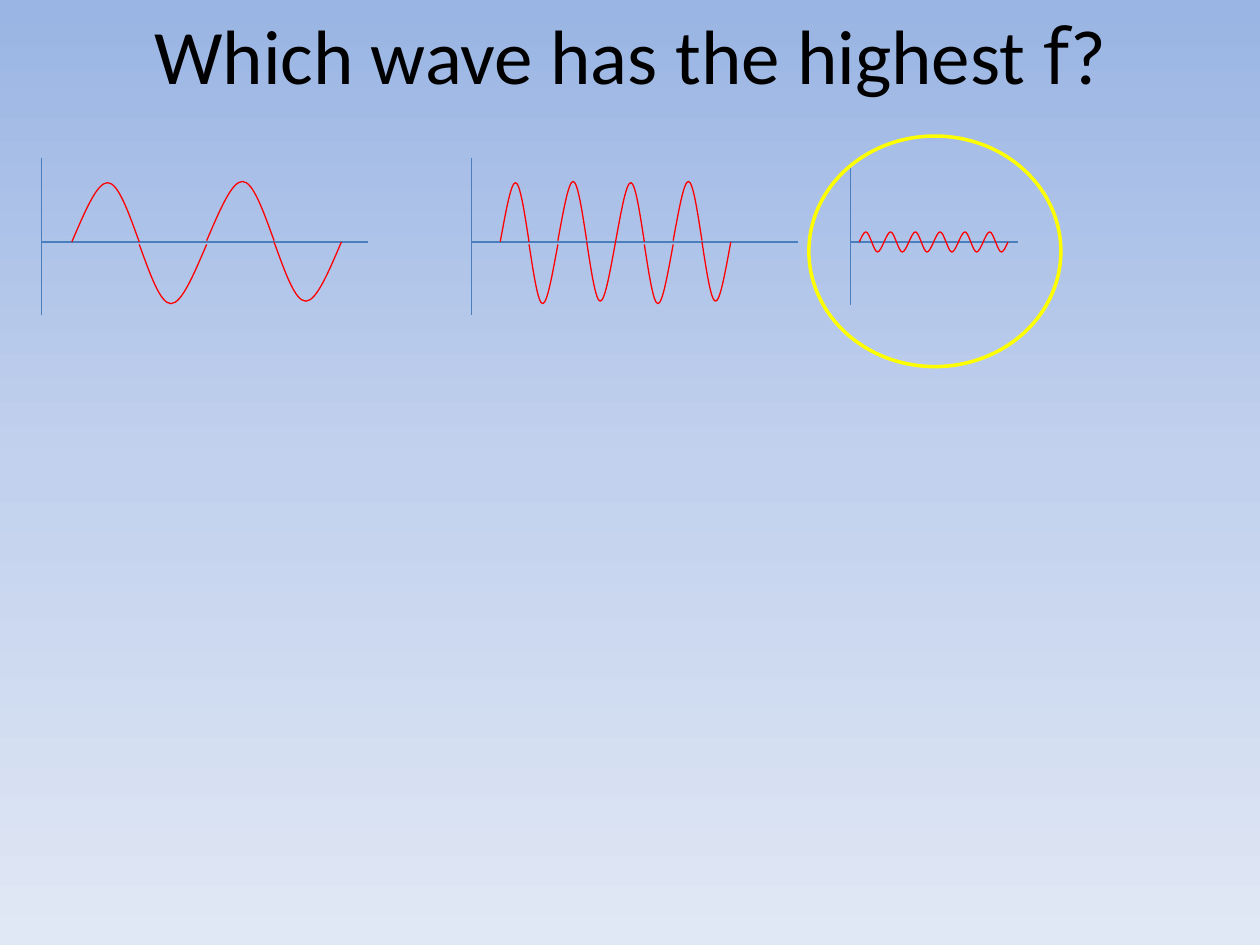
from copy import deepcopy
from pptx import Presentation
from pptx.dml.color import RGBColor
from pptx.enum.shapes import MSO_CONNECTOR, MSO_SHAPE
from pptx.enum.text import MSO_ANCHOR, PP_ALIGN
from pptx.oxml.ns import qn
from pptx.util import Inches, Pt
from lxml import etree


def rgb(value):
    return RGBColor.from_string(value)


def set_line(shape, color, width):
    shape.line.color.rgb = rgb(color)
    shape.line.width = Pt(width)


prs = Presentation()
prs.slide_width, prs.slide_height = Inches(10), Inches(7.5)
s = prs.slides.add_slide(prs.slide_layouts[6])

fill = s.background.fill
fill.gradient()
fill.gradient_angle = 270
stop_list = s.element.find(".//" + qn("a:gsLst"))
stop_list.insert(1, deepcopy(stop_list[0]))
stops = [(0, "9AB5E4"), (0.5, "C2D1ED"), (1, "E1E8F5")]
for stop, (position, color) in zip(fill.gradient_stops, stops):
    stop.position = position
    stop.color.rgb = rgb(color)

tf = s.shapes.add_textbox(Inches(0.5), Inches(-0.2), Inches(9), Inches(1.25)).text_frame
tf.word_wrap = True
tf.vertical_anchor = MSO_ANCHOR.MIDDLE
p = tf.paragraphs[0]
p.alignment = PP_ALIGN.CENTER
p.font.size = Pt(44)
p.font.color.rgb = rgb("000000")
for text, font in [("Which wave has the highest ", "Calibri"), ("f", "Open Sans"), ("?", "Calibri")]:
    r = p.add_run()
    r.text = text
    r.font.name = font

crest = [(0, 1), (0.53, 0), (1, 1)]
curves = [[(0.19, 0.5), (0.37, 0), (0.53, 0)], [(0.69, 0), (0.84, 0.5), (1, 1)]]
pair = s.shapes.add_group_shape()
single = s.shapes.add_group_shape()
waves = [
    (pair, 0.33, 2.92, 1.25, 2.5, 0.57, 2.71, 4, 0.47, [1.92, 1.94, 1.91, 1.92]),
    (pair, 3.74, 6.33, 1.25, 2.5, 3.97, 5.8, 8, 0.47, [1.92, 1.94, 1.91, 1.92]),
    (single, 6.75, 8.08, 1.33, 2.42, 6.82, 8, 12, 0.08, [1.92]),
]
for group, left, right, top, bottom, start, end, halves, height, bases in waves:
    for x1, y1, x2, y2 in [(left, top, left, bottom), (left, 1.92, right, 1.92)]:
        axis = group.shapes.add_connector(
            MSO_CONNECTOR.STRAIGHT, Inches(x1), Inches(y1), Inches(x2), Inches(y2))
        set_line(axis, "4B7EBC", 0.75)
        etree.SubElement(axis.element.spPr, qn("a:effectLst"))
    width = (end - start) / halves
    for i in range(halves):
        below = i % 2
        y_top = bases[i % len(bases)] - (0 if below else height)
        points = [(Inches(start + (i + x) * width), Inches(y_top + y * height)) for x, y in crest]
        builder = group.shapes.build_freeform(*points[0])
        builder.add_line_segments(points[1:], close=False)
        sp = builder.convert_to_shape()
        for segment, curve in zip(list(sp.element.iter(qn("a:lnTo"))), curves):
            bezier = etree.Element(qn("a:cubicBezTo"))
            for x, y in curve:
                etree.SubElement(bezier, qn("a:pt"), x=str(int(x * sp.width)), y=str(int(y * sp.height)))
            segment.getparent().replace(segment, bezier)
        sp.rotation = 180 * below
        sp.fill.background()
        sp.shadow.inherit = False
        set_line(sp, "FF0000", 0.75)

sp = s.shapes.add_shape(MSO_SHAPE.OVAL, Inches(6.42), Inches(1.08), Inches(2), Inches(1.83))
sp.fill.background()
sp.shadow.inherit = False
set_line(sp, "FFFF00", 2)

prs.save("out.pptx")
